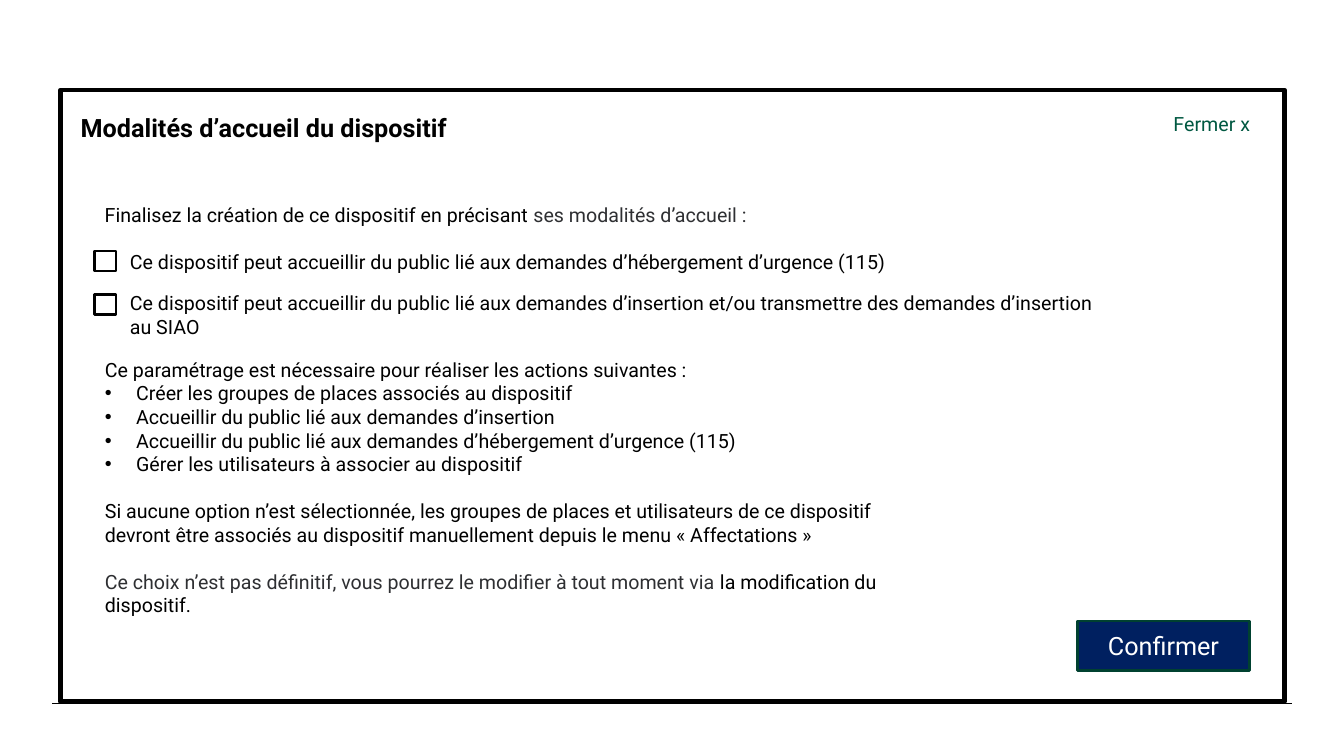
from dataclasses import dataclass

import pptx
import pptx.dml.color
import pptx.enum.shapes
import pptx.enum.text
import pptx.oxml.ns
import pptx.util
from lxml import etree

Inches = pptx.util.Inches
Pt = pptx.util.Pt
COLORS = {
    "black": "000000", "grey": "2E2F32", "green": "005841",
    "navy": "002060", "dark_green": "004130", "white": "FFFFFF",
}
FONT = "Roboto"
LINE_GAP = 16.8
INDENT = 0.31


@dataclass(frozen=True)
class Box:
    left: float
    top: float
    width: float
    height: float


@dataclass(frozen=True)
class Span:
    text: str
    color: str = "black"
    size: float = 14
    bold: bool = False


@dataclass(frozen=True)
class Para:
    spans: tuple[Span, ...]
    bullet: bool = False
    space_before: float = 0


@dataclass(frozen=True)
class Label:
    box: Box
    spans: tuple[Span, ...]


@dataclass(frozen=True)
class Outline:
    box: Box
    width: float


TITLE = Label(Box(0.7, 1.06, 8.29, 0.4),
              (Span("Modalités d’accueil du dispositif", size=18, bold=True),))
LABELS = (
    Label(Box(0.94, 1.96, 8.29, 0.34), (
        Span("Finalisez la création de ce dispositif en précisant "),
        Span("ses modalités d’accueil :", "grey"))),
    Label(Box(11.54, 1.06, 1.29, 0.34), (Span("Fermer x", "green"),)),
    Label(Box(1.19, 2.43, 9.83, 0.34), (
        Span("Ce dispositif peut accueillir du public lié aux demandes "
             "d’hébergement d’urgence (115)"),)),
    Label(Box(1.19, 2.84, 9.83, 0.57), (
        Span("Ce dispositif peut accueillir du public lié aux demandes d’insertion "
             "et/ou transmettre des demandes d’insertion au SIAO"),)),
)
OUTLINES = (
    Outline(Box(0.6, 0.89, 12.14, 6.07), 3),
    Outline(Box(0.94, 2.49, 0.21, 0.2), 2),
    Outline(Box(0.94, 2.92, 0.21, 0.2), 2),
)
ACTIONS = (
    "Créer les groupes de places associés au dispositif",
    "Accueillir du public lié aux demandes d’insertion",
    "Accueillir du public lié aux demandes d’hébergement d’urgence (115)",
    "Gérer les utilisateurs à associer au dispositif",
)
BODY_BOX = Box(0.94, 3.5, 8.29, 2.93)
BODY = (
    Para((Span("Ce paramétrage est nécessaire pour réaliser les actions suivantes :"),)),
    *(Para((Span(action),), bullet=True) for action in ACTIONS),
    Para((Span("Si aucune option n’est sélectionnée, les groupes de places et utilisateurs "
               "de ce dispositif devront être associés au dispositif manuellement depuis "
               "le menu « Affectations »"),), space_before=LINE_GAP),
    Para((Span("Ce choix n’est pas définitif, vous pourrez le modifier à tout moment via",
               "grey"),
          Span(" la modification du dispositif.")), space_before=LINE_GAP),
)


def rgb(name: str) -> pptx.dml.color.RGBColor:
    return pptx.dml.color.RGBColor.from_string(COLORS[name])


def place(shape, box: Box) -> None:
    shape.left, shape.top = Inches(box.left), Inches(box.top)
    shape.width, shape.height = Inches(box.width), Inches(box.height)


def add_spans(paragraph, spans: tuple[Span, ...]) -> None:
    for span in spans:
        run = paragraph.add_run()
        run.text = span.text
        run.font.name = FONT
        run.font.size = Pt(span.size)
        run.font.bold = span.bold
        run.font.color.rgb = rgb(span.color)


def set_bullet(paragraph, bullet: bool) -> None:
    """Show a hanging bullet, or clear the one inherited from the template."""
    properties = paragraph._p.get_or_add_pPr()
    properties.set("marL", str(Inches(INDENT) if bullet else 0))
    properties.set("indent", str(-Inches(INDENT) if bullet else 0))
    tag = "a:buChar" if bullet else "a:buNone"
    mark = etree.SubElement(properties, pptx.oxml.ns.qn(tag))
    if bullet:
        mark.set("char", "•")


def write(shape, paras: tuple[Para, ...]) -> None:
    frame = shape.text_frame
    frame.word_wrap = True
    frame.auto_size = pptx.enum.text.MSO_AUTO_SIZE.NONE
    frame.vertical_anchor = pptx.enum.text.MSO_ANCHOR.TOP
    for index, para in enumerate(paras):
        paragraph = frame.add_paragraph() if index else frame.paragraphs[0]
        set_bullet(paragraph, para.bullet)
        paragraph.alignment = pptx.enum.text.PP_ALIGN.LEFT
        paragraph.space_before = Pt(para.space_before)
        add_spans(paragraph, para.spans)


def add_rectangle(slide, box: Box, line_color: str, line_width: float):
    shape = slide.shapes.add_shape(
        pptx.enum.shapes.MSO_SHAPE.RECTANGLE, Inches(box.left), Inches(box.top),
        Inches(box.width), Inches(box.height))
    shape.shadow.inherit = False
    shape.fill.background()
    shape.line.color.rgb = rgb(line_color)
    shape.line.width = Pt(line_width)
    return shape


def add_label(slide, label: Label) -> None:
    box = label.box
    shape = slide.shapes.add_textbox(
        Inches(box.left), Inches(box.top), Inches(box.width), Inches(box.height))
    write(shape, (Para(label.spans),))


def add_footer_line(slide) -> None:
    line = slide.shapes.add_connector(
        pptx.enum.shapes.MSO_CONNECTOR.STRAIGHT,
        Inches(0.52), Inches(6.98), Inches(12.81), Inches(6.98))
    line.line.color.rgb = rgb("black")
    line.line.width = Pt(0.8)
    etree.SubElement(line._element.spPr, pptx.oxml.ns.qn("a:effectLst"))


def add_confirm_button(slide) -> None:
    button = add_rectangle(slide, Box(10.69, 6.16, 1.7, 0.49), "dark_green", 2)
    button.fill.solid()
    button.fill.fore_color.rgb = rgb("navy")
    button.text_frame.vertical_anchor = pptx.enum.text.MSO_ANCHOR.MIDDLE
    paragraph = button.text_frame.paragraphs[0]
    paragraph.alignment = pptx.enum.text.PP_ALIGN.CENTER
    add_spans(paragraph, (Span("Confirmer", "white", 18),))


def main() -> None:
    deck = pptx.Presentation()
    deck.slide_width, deck.slide_height = Inches(13.33), Inches(7.5)
    page = deck.slides.add_slide(deck.slide_layouts[1])
    title, body = page.shapes.title, page.placeholders[1]
    place(title, TITLE.box)
    write(title, (Para(TITLE.spans),))
    place(body, BODY_BOX)
    write(body, BODY)
    add_footer_line(page)
    for outline in OUTLINES:
        add_rectangle(page, outline.box, "black", outline.width)
    for label in LABELS:
        add_label(page, label)
    add_confirm_button(page)
    deck.save("out.pptx")


if __name__ == "__main__":
    main()
